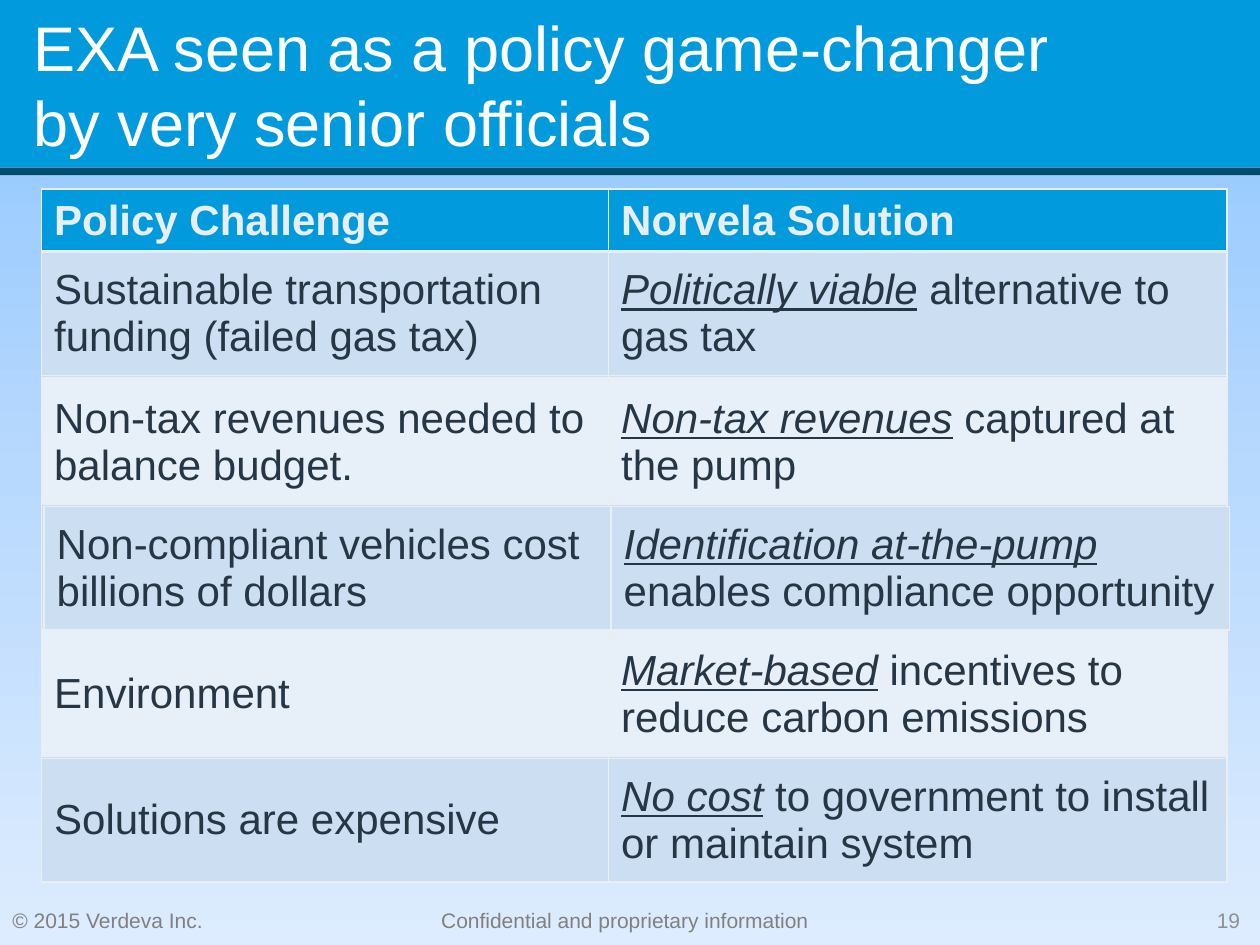
from copy import deepcopy
from dataclasses import dataclass

from lxml.etree import SubElement
from pptx import Presentation
from pptx.dml.color import RGBColor
from pptx.enum.shapes import MSO_SHAPE
from pptx.enum.text import MSO_ANCHOR, PP_ALIGN
from pptx.oxml import parse_xml
from pptx.oxml.ns import nsdecls, qn
from pptx.util import Inches, Pt


@dataclass(frozen=True)
class Theme:
    font: str = "Arial"
    title_size: int = 36
    table_size: int = 24
    footer_size: int = 12
    banner: str = "009ADD"
    rule: str = "004D6E"
    white: str = "FFFFFF"
    pale: str = "E9EEF3"
    ink: str = "263645"
    footer: str = "808080"
    number: str = "8E9194"
    bands: tuple = ("CCDEF2", "E7EFF9")
    background: tuple = ("8AC4FF", "B8D9FE", "DDECFE")


THEME = Theme()
COLUMNS = (4.5, 4.91)
HEADERS = ("Policy Challenge", "Norvela Solution")
# Challenge, emphasised start of the solution, rest of the solution, left edge
ROWS = (
    ("Sustainable transportation funding (failed gas tax)",
     "Politically viable", " alternative to gas tax", 0.33),
    ("Non-tax revenues needed to balance budget.",
     "Non-tax revenues", " captured at the pump", 0.33),
    ("Non-compliant vehicles cost billions of dollars",
     "Identification at-the-pump", " enables compliance opportunity", 0.35),
    ("Environment",
     "Market-based", " incentives to reduce carbon emissions", 0.33),
    ("Solutions are expensive",
     "No cost", " to government to install or maintain system", 0.33),
)


def add_run(p, text, size, color, **formats):
    r = p.add_run()
    r.text = text
    r.font.color.rgb = RGBColor.from_string(color)
    for name, value in {"name": THEME.font, "size": Pt(size), **formats}.items():
        setattr(r.font, name, value)


def add_text(slide, box, text, size, color, align=PP_ALIGN.LEFT):
    tf = slide.shapes.add_textbox(*map(Inches, box)).text_frame
    tf.word_wrap = True
    tf.vertical_anchor = MSO_ANCHOR.MIDDLE
    p = tf.paragraphs[0]
    p.alignment = align
    add_run(p, text, size, color)


def add_bar(slide, box, color):
    sp = slide.shapes.add_shape(MSO_SHAPE.RECTANGLE, *map(Inches, box))
    sp.shadow.inherit = False
    sp.fill.solid()
    sp.fill.fore_color.rgb = RGBColor.from_string(color)
    sp.line.fill.background()


def style_cell(cell, fill, bottom=1):
    """Fill the cell and draw its four borders, with widths in points."""
    cell.fill.solid()
    cell.fill.fore_color.rgb = RGBColor.from_string(fill)
    cell.vertical_anchor = MSO_ANCHOR.MIDDLE
    tc_pr = cell._tc.get_or_add_tcPr()
    for i, (side, width) in enumerate(zip("LRTB", (1, 1, 1, bottom))):
        ln = parse_xml(f'<a:ln{side} {nsdecls("a")} w="{Pt(width)}"/>')
        solid = SubElement(ln, qn("a:solidFill"))
        SubElement(solid, qn("a:srgbClr"), val=THEME.pale)
        tc_pr.insert(i, ln)


def add_grid(slide, left, top, heights):
    frame = slide.shapes.add_table(
        len(heights), len(COLUMNS), Inches(left), Inches(top),
        Inches(sum(COLUMNS)), Inches(sum(heights)))
    table = frame.table
    table.first_row = table.horz_banding = False
    for column, width in zip(table.columns, COLUMNS):
        column.width = Inches(width)
    for row, height in zip(table.rows, heights):
        row.height = Inches(height)
    return table


def set_background(slide):
    fill = slide.background.fill
    fill.gradient()
    fill.gradient_angle = 270
    first = fill.gradient_stops[0]._gs
    first.addnext(deepcopy(first))
    for stop, position, color in zip(fill.gradient_stops, (0, 0.5, 1), THEME.background):
        stop.position = position
        stop.color.rgb = RGBColor.from_string(color)


def add_banner(slide, left, top, width, height):
    add_bar(slide, (left, top, width, height), THEME.banner)
    add_bar(slide, (left, top + height, width, 0.06), THEME.rule)
    add_text(slide, (left + 0.17, top + 0.08, 8.83, 1.17),
             "EXA seen as a policy game-changer by very senior officials",
             THEME.title_size, THEME.white)


def add_policy_table(slide, left, top):
    """Banded backing grid with a header, overlaid by one table for each row."""
    grid = add_grid(slide, left, top, [0.48] + [1] * len(ROWS))
    for cell, text in zip(grid.rows[0].cells, HEADERS):
        style_cell(cell, THEME.banner, bottom=3)
        add_run(cell.text_frame.paragraphs[0], text,
                THEME.table_size, THEME.pale, bold=True)

    for i, (challenge, emphasis, rest, row_left) in enumerate(ROWS):
        band = THEME.bands[i % 2]
        for cell in grid.rows[i + 1].cells:
            style_cell(cell, band)
        row_top = top + 0.5 + i + (0.02 if i else 0)
        cells = add_grid(slide, row_left, row_top, [0.98]).rows[0].cells
        paragraphs = []
        for cell in cells:
            style_cell(cell, band)
            paragraphs.append(cell.text_frame.paragraphs[0])
        text_style = (THEME.table_size, THEME.ink)
        add_run(paragraphs[0], challenge, *text_style)
        add_run(paragraphs[1], emphasis, *text_style, italic=True, underline=True)
        add_run(paragraphs[1], rest, *text_style)


def add_footer(slide, top, height):
    for left, width, text, color, align in (
        (0, 1.75, "© 2015 Verdeva Inc.", THEME.footer, PP_ALIGN.LEFT),
        (3.25, 3.42, "Confidential and proprietary information",
         THEME.footer, PP_ALIGN.CENTER),
        (9.5, 0.5, "19", THEME.number, PP_ALIGN.CENTER),
    ):
        add_text(slide, (left, top, width, height), text,
                 THEME.footer_size, color, align)


def main():
    prs = Presentation()
    prs.slide_width, prs.slide_height = Inches(10), Inches(7.5)
    slide = prs.slides.add_slide(prs.slide_layouts[6])
    set_background(slide)
    add_banner(slide, 0, 0, 10, 1.33)
    add_policy_table(slide, 0.33, 1.5)
    add_footer(slide, 7.1, 0.4)
    prs.save("out.pptx")


if __name__ == "__main__":
    main()
